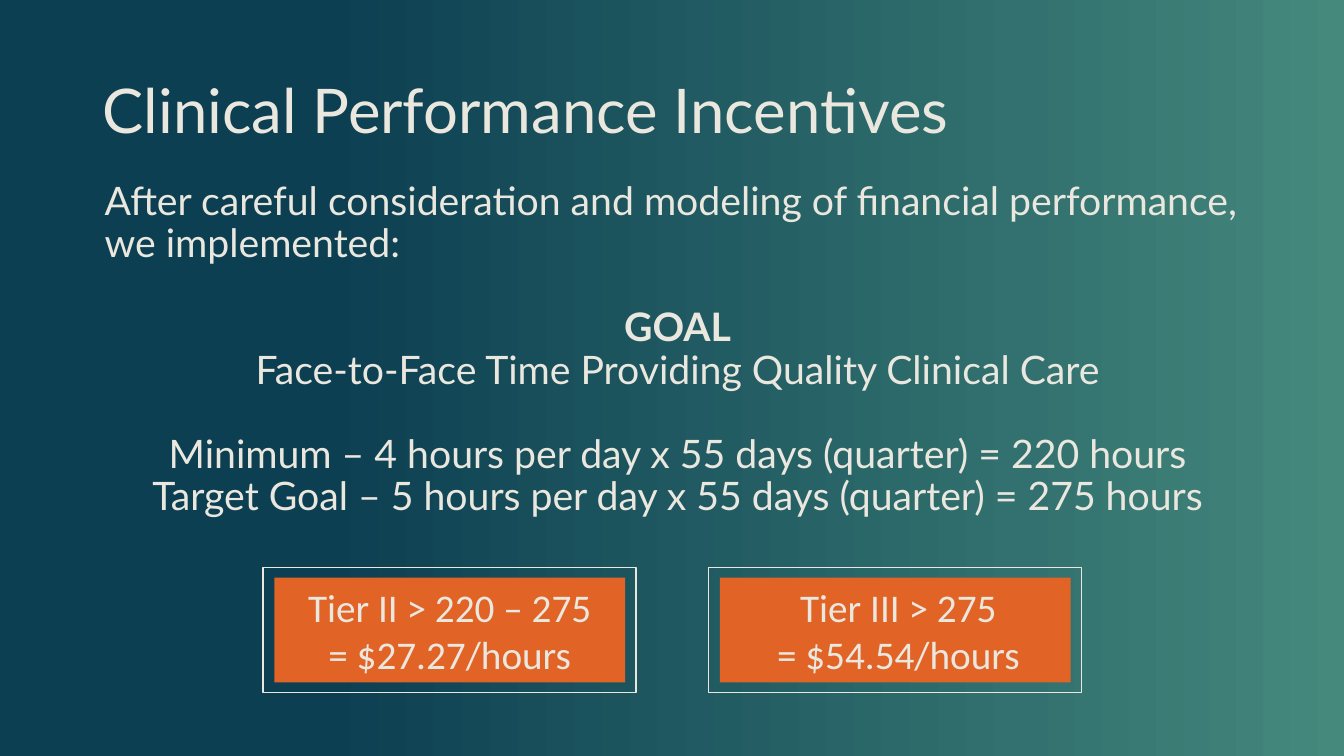
import copy

import pptx
import pptx.dml.color
import pptx.enum.shapes
import pptx.enum.text
import pptx.oxml.ns
import pptx.util

WIDTH, HEIGHT = 13.33, 7.5
CREAM, ORANGE = "EAE7DF", "E16326"
BACKGROUND = [(0.24, "0C3F52"), (0.76, "32716F"), (1, "45897D")]
CENTER = pptx.enum.text.PP_ALIGN.CENTER
LEFT = pptx.enum.text.PP_ALIGN.LEFT
TOP = pptx.enum.text.MSO_ANCHOR.TOP
MIDDLE = pptx.enum.text.MSO_ANCHOR.MIDDLE

TITLE = "Clinical Performance Incentives"
# Text, paragraph format, bold
BODY = [
    ("After careful consideration and modeling of financial performance, we implemented:", LEFT, 0, False),
    ("GOAL", CENTER, 30, True),
    ("Face-to-Face Time Providing Quality Clinical Care", CENTER, 0, False),
    ("Minimum – 4 hours per day x 55 days (quarter) = 220 hours", CENTER, 30, False),
    ("Target Goal – 5 hours per day x 55 days (quarter) = 275 hours", CENTER, 0, False),
]
TIERS = [
    (["Tier II > 220 – 275", "= $27.27/hours"], 0),
    (["Tier III > 275", "= $54.54/hours"], 0.06),
]
CARD_LEFT, CARD_TOP, CARD_PITCH = 2.72, 5.73, 4.42
CARD_WIDTH, CARD_HEIGHT = 3.48, 1.04
FRAME_GAP_X, FRAME_GAP_Y = 0.11, 0.1


def color(value):
    return pptx.dml.color.RGBColor.from_string(value)


def inches(*values):
    return [pptx.util.Inches(value) for value in values]


def paint_background(page):
    fill = page.background.fill
    fill.gradient()
    fill.gradient_angle = 0
    stop_list = page.element.find(".//" + pptx.oxml.ns.qn("a:gsLst"))
    stop_list.append(copy.deepcopy(stop_list[-1]))
    for stop, (position, shade) in zip(fill.gradient_stops, BACKGROUND):
        stop.position = position
        stop.color.rgb = color(shade)


def write(frame, lines, size, font, spacing, anchor):
    """Fill a text frame with (text, alignment, space before, bold, indent) lines."""
    frame.word_wrap = True
    frame.vertical_anchor = anchor
    for index, (text, alignment, before, bold, indent) in enumerate(lines):
        para = frame.paragraphs[0] if index == 0 else frame.add_paragraph()
        if indent:
            para._p.get_or_add_pPr().set("marL", str(pptx.util.Inches(indent)))
        para.alignment = alignment
        para.line_spacing = spacing
        if before:
            para.space_before = pptx.util.Pt(before)
        span = para.add_run()
        span.text = text
        formats = {"size": pptx.util.Pt(size), "name": font, "bold": bold}
        for name, value in formats.items():
            setattr(span.font, name, value)
        span.font.color.rgb = color(CREAM)


def add_text(page, place, lines, size, anchor):
    box = page.shapes.add_textbox(*inches(*place))
    write(box.text_frame, lines, size, "Lato", 0.9, anchor)


def add_rectangle(page, place, fill=None, line=None):
    box = page.shapes.add_shape(pptx.enum.shapes.MSO_SHAPE.RECTANGLE, *inches(*place))
    box.shadow.inherit = False
    if fill:
        box.fill.solid()
        box.fill.fore_color.rgb = color(fill)
    else:
        box.fill.background()
    if line:
        box.line.color.rgb = color(line)
        box.line.width = pptx.util.Pt(1)
    else:
        box.line.fill.background()
    return box


def add_tier(page, left, texts, indent):
    """Draw an orange card inside an outlined frame."""
    card = add_rectangle(page, (left, CARD_TOP, CARD_WIDTH, CARD_HEIGHT), fill=ORANGE)
    lines = [(text, CENTER, 0, False, indent) for text in texts]
    write(card.text_frame, lines, 28, "Calibri", 1.0, MIDDLE)
    add_rectangle(
        page,
        (left - FRAME_GAP_X, CARD_TOP - FRAME_GAP_Y,
         CARD_WIDTH + 2 * FRAME_GAP_X, CARD_HEIGHT + 2 * FRAME_GAP_Y),
        line=CREAM,
    )


def main():
    deck = pptx.Presentation()
    deck.slide_width, deck.slide_height = inches(WIDTH, HEIGHT)
    page = deck.slides.add_slide(deck.slide_layouts[6])
    paint_background(page)
    add_text(page, (0.92, 0.4, 11.5, 1.45), [(TITLE, LEFT, 0, False, 0)], 44, MIDDLE)
    body = [(*line, 0.06 if line[1] == CENTER else 0) for line in BODY]
    add_text(page, (0.94, 1.75, 11.5, 3.6), body, 28, TOP)
    for column, (texts, indent) in enumerate(TIERS):
        add_tier(page, CARD_LEFT + column * CARD_PITCH, texts, indent)
    deck.save("out.pptx")


if __name__ == "__main__":
    main()
